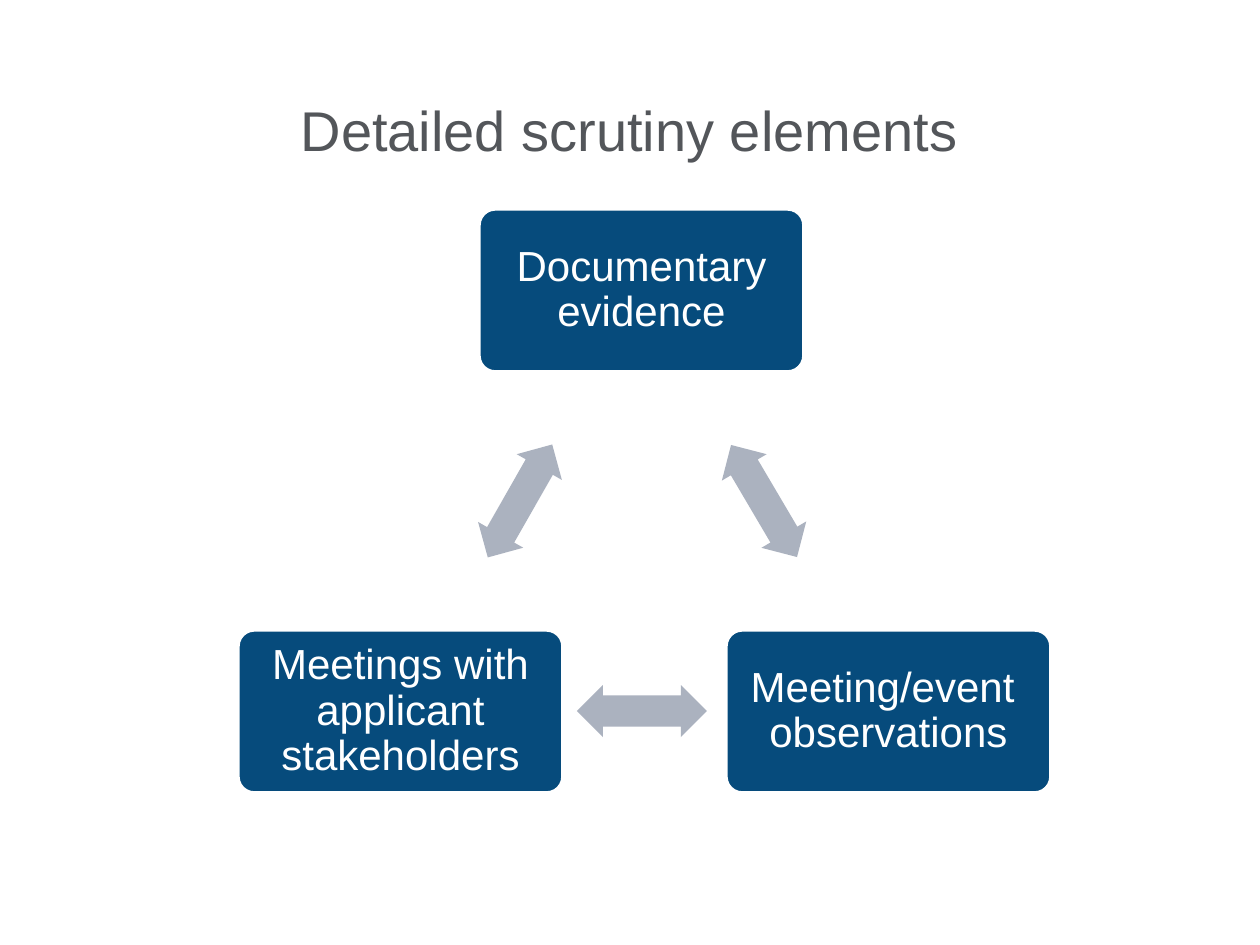
from pptx import Presentation
from pptx import util as u
from pptx.dml.color import RGBColor
from pptx.enum import shapes, text

SCALE = 914400 / 126
COLORS = {"title": "53565A", "node": "064B7C", "arrow": "ABB2BF", "light": "FFFFFF"}
NODE_SIZE = (325, 163)
ARROW_SIZE = (130, 52)
FRAME = {"word_wrap": True, "auto_size": text.MSO_AUTO_SIZE.NONE}


def px(length):
    """Turn px into EMU."""
    return u.Emu(round(length * SCALE))


def color(name):
    """Look up a palette colour."""
    return RGBColor.from_string(COLORS[name])


def apply(target, values):
    """Set attributes from a dict of format values."""
    for name, value in values.items():
        setattr(target, name, value)


def write(frame, wording, size, tint, inset, anchor, spacing):
    """Write one centred paragraph into a text frame."""
    margins = {f"margin_{side}": px(inset) for side in ("left", "top", "right", "bottom")}
    apply(frame, {**FRAME, **margins, "vertical_anchor": anchor})
    paragraph = frame.paragraphs[0]
    paragraph.text = wording
    apply(paragraph, {"alignment": text.PP_ALIGN.CENTER, "line_spacing": spacing})
    apply(paragraph.font, {"name": "Arial", "size": u.Pt(size), "bold": False})
    paragraph.font.color.rgb = color(tint)


def add_title(slide, box, wording):
    """Place the title placeholder in its box."""
    title = slide.shapes.title
    apply(title, dict(zip(("left", "top", "width", "height"), map(px, box))))
    write(title.text_frame, wording, 32, "title", 12, text.MSO_ANCHOR.TOP, 1.0)


def add_block(slide, kind, box, fill, adjustments):
    """Add a filled preset shape without shadow."""
    block = slide.shapes.add_shape(kind, *map(px, box))
    block.shadow.inherit = False
    block.fill.solid()
    block.fill.fore_color.rgb = color(fill)
    for index, value in enumerate(adjustments):
        block.adjustments[index] = value
    return block


def add_node(slide, left, top, wording):
    """Add one rounded element of the cycle."""
    node = add_block(slide, shapes.MSO_SHAPE.ROUNDED_RECTANGLE,
                     (left, top, *NODE_SIZE), "node", [0.1])
    node.line.color.rgb = color("light")
    node.line.width = u.Pt(2)
    write(node.text_frame, wording, 24, "light", 12, text.MSO_ANCHOR.MIDDLE, 0.9)


def add_arrow(slide, left, top, angle):
    """Add one two-way arrow of the cycle."""
    arrow = add_block(slide, shapes.MSO_SHAPE.LEFT_RIGHT_ARROW,
                      (left, top, *ARROW_SIZE), "arrow", [0.6, 0.5])
    arrow.line.fill.background()
    arrow.rotation = angle


def add_cycle(slide, box):
    """Lay out three elements and the arrows between them in a box."""
    left, top, width, height = box
    node_width, node_height = NODE_SIZE
    arrow_width, arrow_height = ARROW_SIZE
    middle = left + (width - node_width) // 2
    right = left + width - node_width
    bottom = top + height - node_height
    add_node(slide, middle - 3, top, "Documentary evidence")
    add_node(slide, right, bottom, "Meeting/event  observations")
    add_node(slide, left, bottom, "Meetings with applicant stakeholders")

    center = left + width // 2 - 2
    arrow_left = center - arrow_width // 2
    slant_top = top + (height - arrow_height) // 2
    base_top = bottom + (node_height - arrow_height) // 2
    add_arrow(slide, arrow_left + 122, slant_top, 59.5)
    add_arrow(slide, arrow_left, base_top, 180)
    add_arrow(slide, arrow_left - 122, slant_top, 299.7)


def main():
    """Build and save the slide."""
    deck = Presentation()
    deck.slide_width, deck.slide_height = px(1260), px(945)
    slide = deck.slides.add_slide(deck.slide_layouts[5])
    add_title(slide, (94, 84, 1071, 158), "Detailed scrutiny elements")
    add_cycle(slide, (238, 209, 813, 584))
    deck.save("out.pptx")


if __name__ == "__main__":
    main()
